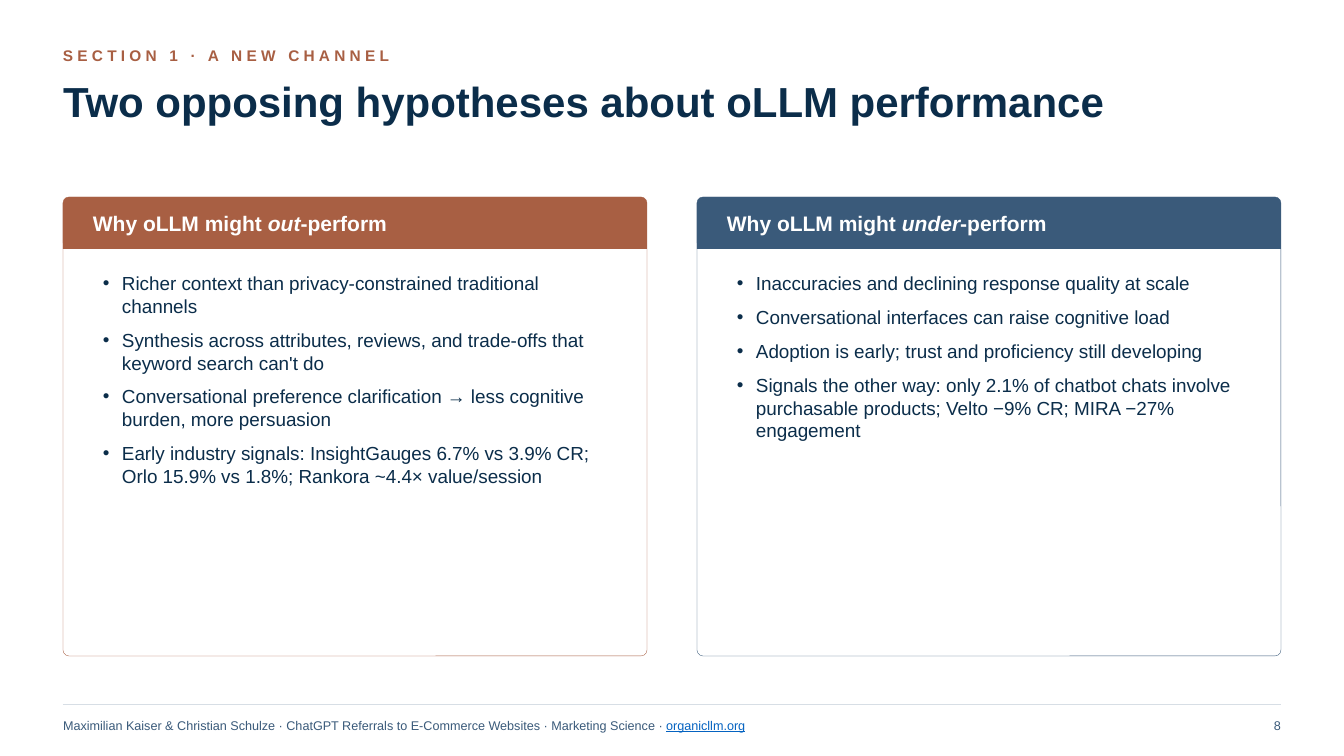
from lxml import etree
from pptx import Presentation
from pptx.dml.color import RGBColor
from pptx.enum.shapes import MSO_CONNECTOR, MSO_SHAPE
from pptx.enum.text import MSO_ANCHOR, MSO_AUTO_SIZE, PP_ALIGN
from pptx.oxml.ns import qn
from pptx.util import Pt

TOP, MIDDLE = MSO_ANCHOR.TOP, MSO_ANCHOR.MIDDLE
LEFT, RIGHT = PP_ALIGN.LEFT, PP_ALIGN.RIGHT
ROUNDED, SQUARE = MSO_SHAPE.ROUNDED_RECTANGLE, MSO_SHAPE.RECTANGLE
STRAIGHT = MSO_CONNECTOR.STRAIGHT
NO_FIT = MSO_AUTO_SIZE.NONE

COLORS = {"navy": "0B2D4A", "rust": "A85F43", "slate": "3A5A7A",
          "white": "FFFFFF", "rule": "D7DEE5", "link": "0563C1"}

SECTION = "SECTION 1 · A NEW CHANNEL"
TITLE = "Two opposing hypotheses about oLLM performance"
CARDS = [
    {"color": "rust", "stress": "out", "points": [
        "Richer context than privacy-constrained traditional channels",
        "Synthesis across attributes, reviews, and trade-offs that keyword search can't do",
        "Conversational preference clarification → less cognitive burden, more persuasion",
        "Early industry signals: InsightGauges 6.7% vs 3.9% CR; "
        "Orlo 15.9% vs 1.8%; Rankora ~4.4× value/session"]},
    {"color": "slate", "stress": "under", "points": [
        "Inaccuracies and declining response quality at scale",
        "Conversational interfaces can raise cognitive load",
        "Adoption is early; trust and proficiency still developing",
        "Signals the other way: only 2.1% of chatbot chats involve "
        "purchasable products; Velto −9% CR; MIRA −27% engagement"]},
]
CITATION = ("Maximilian Kaiser & Christian Schulze · ChatGPT Referrals to "
            "E-Commerce Websites · Marketing Science · ")
SITE = "organicllm.org"
PAGE_NUMBER = "8"

FORMATS = {
    "section": {"size": Pt(11), "bold": True},
    "title": {"size": Pt(30), "bold": True},
    "heading": {"size": Pt(15), "bold": True},
    "stress": {"size": Pt(15), "bold": True, "italic": True},
    "point": {"size": Pt(13.5)},
    "footer": {"size": Pt(9)},
    "link": {"size": Pt(9), "underline": True},
}

PAGE_W, PAGE_H = 1344, 756
MARGIN, CONTENT_W = 63, 1218
CARD_TOP, CARD_W, CARD_H = 197, 584, 459
HEAD_H, CORNER = 52, 6
PADDING, INNER_W = 30, 524
POINTS_TOP, POINTS_H, INDENT = 267, 371, 19
RULE_Y, FOOTER_TOP, LABEL_H, NUMBER_W = 704, 710, 30, 101


def px(length):
    return round(length * 914400 / 100.8)


def color(name):
    return RGBColor.from_string(COLORS[name])


def place(box, left, top, width, height):
    for name, value in zip(("left", "top", "width", "height"), (left, top, width, height)):
        setattr(box, name, px(value))


def set_frame(box, anchor, inset_x=0, inset_y=0):
    settings = {"word_wrap": True, "auto_size": NO_FIT, "vertical_anchor": anchor,
                "margin_left": px(inset_x), "margin_right": px(inset_x),
                "margin_top": px(inset_y), "margin_bottom": px(inset_y)}
    for name, value in settings.items():
        setattr(box.text_frame, name, value)


def write(para, spans, align=LEFT):
    para.alignment = align
    for text, style, tint in spans:
        span = para.add_run()
        span.text = text
        span.font.name = "Arial"
        span.font.color.rgb = color(tint)
        for name, value in FORMATS[style].items():
            setattr(span.font, name, value)


def add_label(page, area, spans, align=LEFT):
    box = page.shapes.add_textbox(*map(px, area))
    set_frame(box, MIDDLE)
    write(box.text_frame.paragraphs[0], spans, align)
    return box


def add_panel(page, kind, area, fill, line=None):
    panel = page.shapes.add_shape(kind, *map(px, area))
    panel.shadow.inherit = False
    panel.fill.solid()
    panel.fill.fore_color.rgb = color(fill)
    if kind == ROUNDED:
        panel.adjustments[0] = CORNER / min(area[2:])
    if line:
        panel.line.color.rgb = color(line)
        panel.line.width = Pt(0.25)
    else:
        panel.line.fill.background()


def fill_points(box, points):
    set_frame(box, TOP, 10, 5)
    for index, point in enumerate(points):
        frame = box.text_frame
        para = frame.add_paragraph() if index else frame.paragraphs[0]
        settings = para._p.get_or_add_pPr()
        settings.set("marL", str(px(INDENT)))
        settings.set("indent", str(-px(INDENT)))
        etree.SubElement(settings, qn("a:buFont")).set("typeface", "Arial")
        etree.SubElement(settings, qn("a:buChar")).set("char", "•")
        para.space_before, para.space_after = Pt(0), Pt(8)
        write(para, [(point, "point", "navy")])


def add_card(page, left, card, body):
    tint = card["color"]
    add_panel(page, ROUNDED, (left, CARD_TOP, CARD_W, CARD_H), "white", tint)
    add_panel(page, ROUNDED, (left, CARD_TOP, CARD_W, HEAD_H), tint)
    add_panel(page, SQUARE, (left, CARD_TOP + CORNER, CARD_W, HEAD_H - CORNER), tint)
    add_label(page, (left + PADDING, CARD_TOP, INNER_W, HEAD_H), [
        ("Why oLLM might ", "heading", "white"),
        (card["stress"], "stress", "white"),
        ("-perform", "heading", "white")])
    place(body, left + PADDING, POINTS_TOP, INNER_W, POINTS_H)
    fill_points(body, card["points"])
    body.element.getparent().append(body.element)


def add_footer(page):
    right = MARGIN + CONTENT_W
    rule = page.shapes.add_connector(STRAIGHT, px(MARGIN), px(RULE_Y), px(right), px(RULE_Y))
    rule.line.color.rgb = color("rule")
    rule.line.width = Pt(0.5)
    etree.SubElement(rule.element.spPr, qn("a:effectLst"))
    add_label(page, (MARGIN, FOOTER_TOP, CONTENT_W - NUMBER_W, LABEL_H),
              [(CITATION, "footer", "slate"), (SITE, "link", "link")])
    add_label(page, (right - NUMBER_W, FOOTER_TOP, NUMBER_W, LABEL_H),
              [(PAGE_NUMBER, "footer", "slate")], RIGHT)


def main():
    deck = Presentation()
    deck.slide_width, deck.slide_height = px(PAGE_W), px(PAGE_H)
    page = deck.slides.add_slide(deck.slide_layouts[3])
    title, *bodies = list(page.placeholders)[:3]

    section = add_label(page, (MARGIN, 40, CONTENT_W, LABEL_H), [(SECTION, "section", "rust")])
    section.text_frame.paragraphs[0].runs[0].font._element.set("spc", "300")

    place(title, MARGIN, 75, CONTENT_W, 96)
    set_frame(title, TOP)
    heading = title.text_frame.paragraphs[0]
    heading.line_spacing = 1.02
    write(heading, [(TITLE, "title", "navy")])

    gap = CONTENT_W - 2 * CARD_W
    for index, (card, body) in enumerate(zip(CARDS, bodies)):
        add_card(page, MARGIN + index * (CARD_W + gap), card, body)
    add_footer(page)
    deck.save("out.pptx")


if __name__ == "__main__":
    main()
